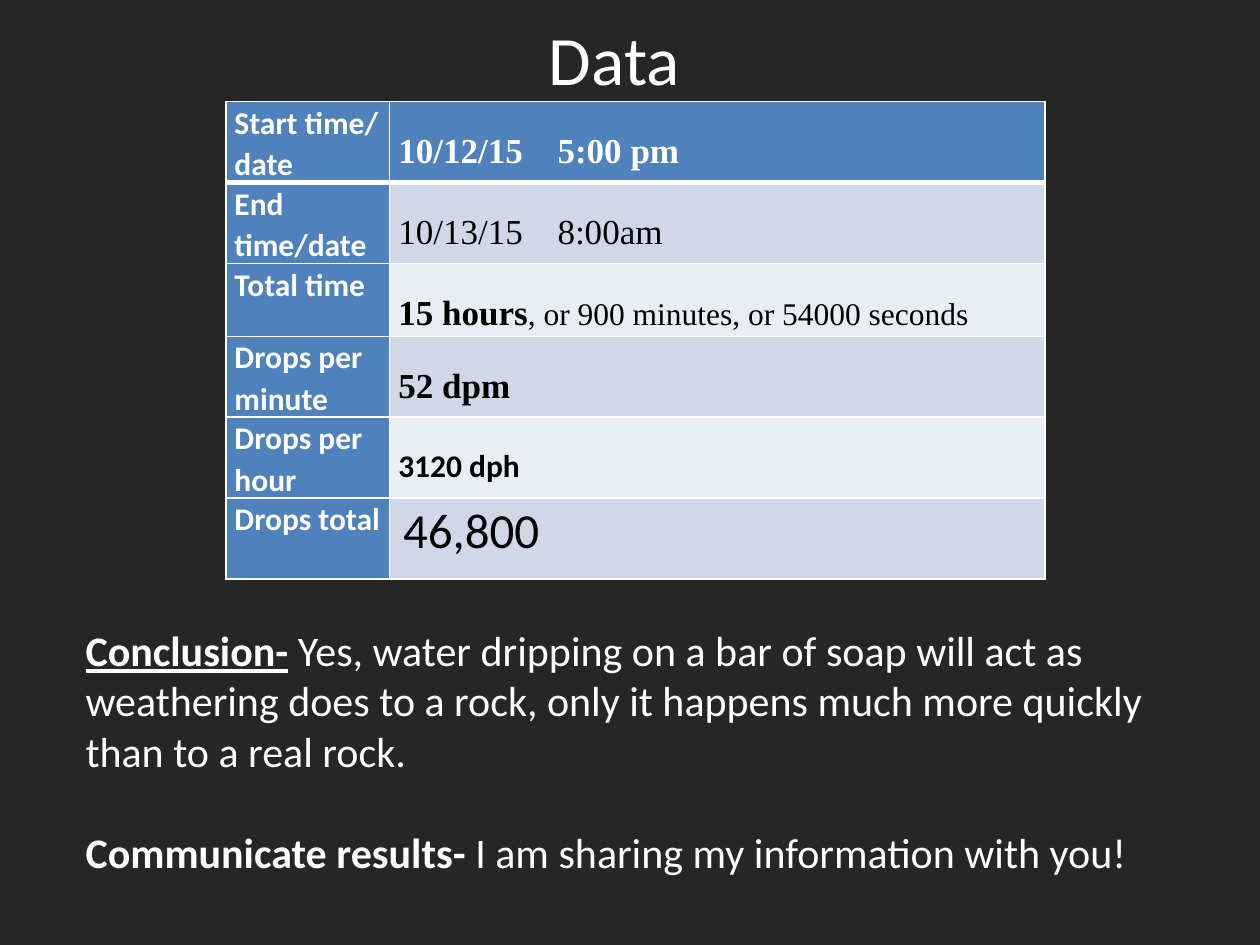
from dataclasses import dataclass

from lxml import etree
from pptx import Presentation
from pptx.dml.color import RGBColor
from pptx.enum.text import MSO_ANCHOR, PP_ALIGN
from pptx.oxml.ns import qn
from pptx.util import Pt

CENTER = PP_ALIGN.CENTER
MIDDLE = MSO_ANCHOR.MIDDLE
TOP = MSO_ANCHOR.TOP


@dataclass(frozen=True)
class Theme:
    background: str = "262626"
    white: str = "FFFFFF"
    black: str = "000000"
    header: str = "4F81BD"
    bands: tuple = ("E9EDF4", "D0D8E8")
    sans: str = "Calibri"
    serif: str = "Times New Roman"
    title_size: float = 39.6
    body_size: float = 24
    label_size: float = 18
    value_size: float = 20
    total_size: float = 28


THEME = Theme()
SERIF_VALUE = {"size": THEME.value_size, "font": THEME.serif}
BOLD_VALUE = {**SERIF_VALUE, "bold": True}
SMALL_VALUE = {"size": THEME.label_size, "font": THEME.serif}

ROWS = [
    ("Start time/ date", [("10/12/15\t5:00 pm", BOLD_VALUE)]),
    ("End time/date", [("10/13/15\t8:00am", SERIF_VALUE)]),
    ("Total time", [("15 hours", BOLD_VALUE),
                    (", or 900 minutes, or 54000 seconds", SMALL_VALUE)]),
    ("Drops per minute", [("52 dpm", BOLD_VALUE)]),
    ("Drops per hour", [("3120 dph", {"size": THEME.label_size, "bold": True})]),
    ("Drops total", [("46,800", {"size": THEME.total_size})]),
]
ROW_HEIGHTS = [46.2, 46.2, 41.2, 46.2, 46.2, 46.2]
COLUMN_WIDTHS = [93.6, 374.4]
VALUE_TAB = 91


def add_text(paragraph, text, size=THEME.body_size, font=THEME.sans,
             color=THEME.white, bold=False, underline=False):
    run = paragraph.add_run()
    run.text = text
    run.font.size = Pt(size)
    run.font.name = font
    run.font.color.rgb = RGBColor.from_string(color)
    run.font.bold = bold
    run.font.underline = underline


def add_text_box(slide, left, top, width, height, anchor=TOP):
    frame = slide.shapes.add_textbox(Pt(left), Pt(top), Pt(width), Pt(height)).text_frame
    frame.word_wrap = True
    frame.vertical_anchor = anchor
    return frame


def add_tab_stop(paragraph, position):
    properties = paragraph._p.get_or_add_pPr()
    tabs = etree.SubElement(properties, qn("a:tabLst"))
    etree.SubElement(tabs, qn("a:tab"), pos=str(Pt(position)), algn="l")


def set_borders(cell, top=1, bottom=1):
    properties = cell._tc.get_or_add_tcPr()
    widths = {"a:lnL": 1, "a:lnR": 1, "a:lnT": top, "a:lnB": bottom}
    for index, (side, width) in enumerate(widths.items()):
        line = etree.Element(qn(side), w=str(Pt(width)))
        fill = etree.SubElement(line, qn("a:solidFill"))
        etree.SubElement(fill, qn("a:srgbClr"), val=THEME.white)
        properties.insert(index, line)


def fill_cell(cell, runs, fill, color, margin_left=5, margin_top=0):
    cell.margin_left, cell.margin_top = Pt(margin_left), Pt(margin_top)
    cell.margin_right, cell.margin_bottom = Pt(5), Pt(0)
    cell.fill.solid()
    cell.fill.fore_color.rgb = RGBColor.from_string(fill)
    paragraph = cell.text_frame.paragraphs[0]
    paragraph.line_spacing = 1.07
    if any("\t" in text for text, _ in runs):
        add_tab_stop(paragraph, VALUE_TAB)
    for text, style in runs:
        add_text(paragraph, text, color=color, **style)


def add_data_table(slide, left, top):
    table = slide.shapes.add_table(
        len(ROWS), len(COLUMN_WIDTHS), Pt(left), Pt(top),
        Pt(sum(COLUMN_WIDTHS)), Pt(sum(ROW_HEIGHTS))).table
    for column, width in zip(table.columns, COLUMN_WIDTHS):
        column.width = Pt(width)
    last = len(ROWS) - 1
    for index, (label, value) in enumerate(ROWS):
        table.rows[index].height = Pt(ROW_HEIGHTS[index])
        label_cell, value_cell = table.cell(index, 0), table.cell(index, 1)
        fill_cell(label_cell, [(label, {"size": THEME.label_size, "bold": True})],
                  THEME.header, THEME.white)
        fill_cell(value_cell, value,
                  THEME.bands[index % 2] if index else THEME.header,
                  THEME.black if index else THEME.white,
                  margin_left=7.7 if index == last else 5,
                  margin_top=0 if index == last else 16)
        for cell in (label_cell, value_cell):
            set_borders(cell, top=3 if index == 1 else 1, bottom=1 if index else 3)


def add_title(slide):
    frame = add_text_box(slide, 252, 12.2, 198, 41.8, anchor=MIDDLE)
    paragraph = frame.paragraphs[0]
    paragraph.alignment = CENTER
    add_text(paragraph, "Data", size=THEME.title_size)


def add_conclusion(slide):
    frame = add_text_box(slide, 41.8, 353.3, 642.2, 152)
    conclusion = frame.paragraphs[0]
    add_text(conclusion, "Conclusion-", bold=True, underline=True)
    add_text(conclusion, " Yes, water dripping on a bar of soap will act as weathering does "
             "to a rock, only it happens much more quickly than to a real rock.")
    results = frame.add_paragraph()
    results.space_before = Pt(29)
    add_text(results, "Communicate results- ", bold=True)
    add_text(results, "I am sharing my information with you!")


def main():
    presentation = Presentation()
    presentation.slide_width, presentation.slide_height = Pt(720), Pt(540)
    slide = presentation.slides.add_slide(presentation.slide_layouts[6])
    slide.background.fill.solid()
    slide.background.fill.fore_color.rgb = RGBColor.from_string(THEME.background)
    add_title(slide)
    add_conclusion(slide)
    add_data_table(slide, 129, 58)
    presentation.save("out.pptx")


if __name__ == "__main__":
    main()
